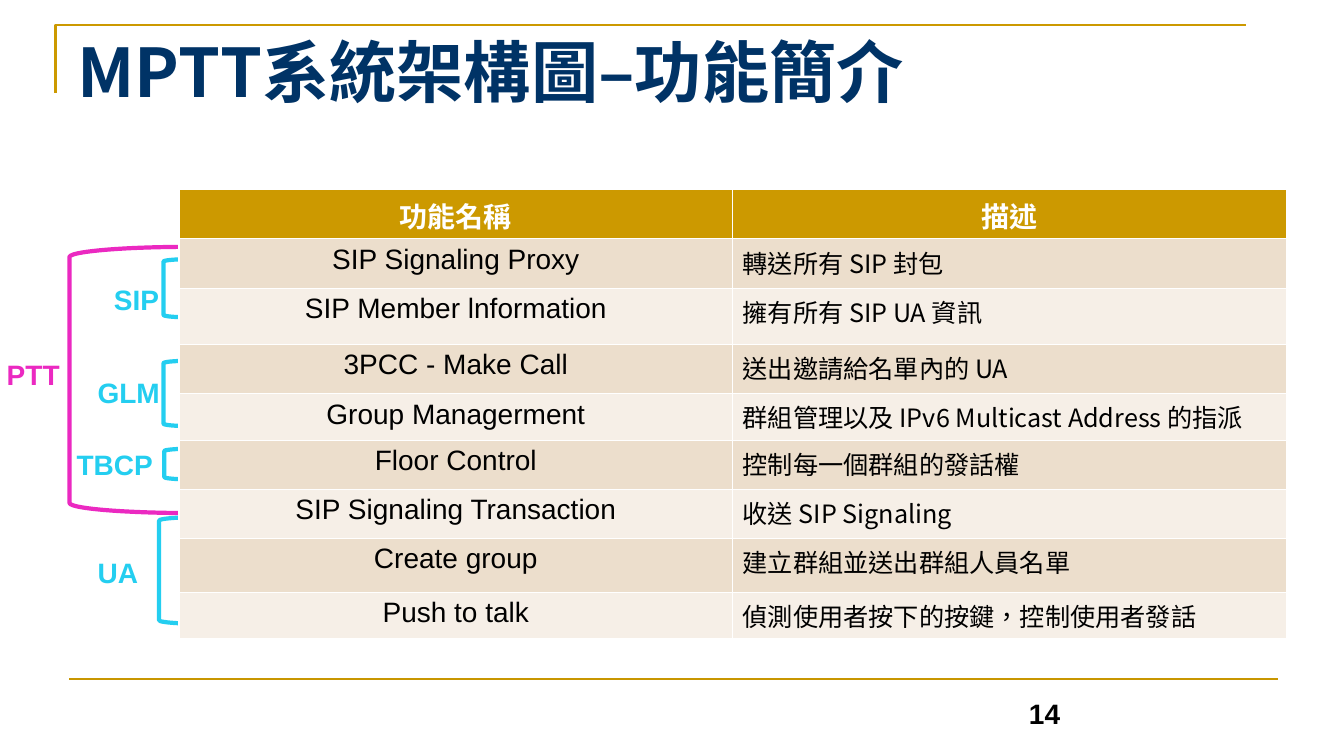
"""Build the MPTT function overview slide: a table with bracketed module groups."""
from lxml import etree
from pptx import Presentation
from pptx import util as u
from pptx.dml.color import RGBColor
from pptx.enum import lang, shapes, text
from pptx.oxml import ns

GOLD = RGBColor(0xCC, 0x99, 0x00)
RULE_GOLD = RGBColor(0xC8, 0x96, 0x00)
NAVY = RGBColor(0x00, 0x33, 0x66)
PINK = RGBColor(0xEB, 0x29, 0xC1)
CYAN = RGBColor(0x24, 0xCE, 0xF0)
SAND = RGBColor(0xEC, 0xDE, 0xCC)
CREAM = RGBColor(0xF6, 0xEF, 0xE7)
WHITE = RGBColor(0xFF, 0xFF, 0xFF)
BLACK = RGBColor(0x00, 0x00, 0x00)
LATIN, CHINESE = "Arial", "Noto Sans CJK SC"
CENTER, LEFT = text.PP_ALIGN.CENTER, text.PP_ALIGN.LEFT

HEADER = ("功能名稱", "描述")
FUNCTIONS = [
    ("SIP Signaling Proxy", "轉送所有 SIP 封包"),
    ("SIP Member lnformation", "擁有所有 SIP UA 資訊"),
    ("3PCC - Make Call", "送出邀請給名單內的 UA"),
    ("Group Managerment", "群組管理以及 IPv6 Multicast Address 的指派"),
    ("Floor Control", "控制每一個群組的發話權"),
    ("SIP Signaling Transaction", "收送 SIP Signaling"),
    ("Create group", "建立群組並送出群組人員名單"),
    ("Push to talk", "偵測使用者按下的按鍵，控制使用者發話"),
]
ROW_HEIGHTS = (1.24, 1.24, 1.42, 1.24, 1.17, 1.24, 1.24, 1.35, 1.17)

GROUPS = [
    ("PTT", PINK, (1.75, 6.22, 3.1, 6.71), (-0.08, 8.89, 1.85, 1.12)),
    ("TBCP", CYAN, (4.14, 11.3, 0.97, 0.79), (1.68, 11.15, 2.46, 1.12)),
    ("GLM", CYAN, (4.12, 9.09, 0.74, 1.65), (2.21, 9.35, 2.08, 1.12)),
    ("SIP", CYAN, (4.12, 6.53, 0.74, 1.47), (2.62, 6.99, 1.65, 1.12)),
    ("UA", CYAN, (4.01, 13.03, 1.07, 2.69), (2.21, 13.87, 1.55, 1.12)),
]


def cm(*lengths):
    return [u.Cm(length) for length in lengths]


class SlideBuilder:
    """Holds the current slide and its text style."""

    def __init__(self, deck):
        self.slide = deck.slides.add_slide(deck.slide_layouts[5])
        self.shapes = self.slide.shapes

    def add_words(self, frame, words, size, color, bold=False, font=LATIN, align=LEFT):
        para = frame.paragraphs[0]
        para.alignment = align
        span = para.add_run()
        span.text = words
        span.font.size = u.Pt(size)
        span.font.bold = bold
        span.font.name = font
        span.font.color.rgb = color
        if not words.isascii():
            span.font.language_id = lang.MSO_LANGUAGE_ID.TRADITIONAL_CHINESE
            east_asian = etree.SubElement(span._r.rPr, ns.qn("a:ea"))
            east_asian.set("typeface", CHINESE)

    def title(self, words, place):
        box = self.shapes.title
        box.left, box.top, box.width, box.height = cm(*place)
        frame = box.text_frame
        frame.vertical_anchor = text.MSO_ANCHOR.TOP
        frame.margin_top = 0
        self.add_words(frame, words, 48, NAVY, True, CHINESE)

    def corner(self, left, top, right, bottom):
        start, *rest = [cm(*point) for point in ((left, bottom), (left, top), (right, top))]
        builder = self.shapes.build_freeform(*start)
        builder.add_line_segments(rest, close=False)
        outline = builder.convert_to_shape()
        outline.shadow.inherit = False
        outline.fill.background()
        outline.line.color.rgb = GOLD
        outline.line.width = u.Pt(1.5)

    def rule(self, left, right, top):
        line = self.shapes.add_connector(
            shapes.MSO_CONNECTOR.STRAIGHT, *cm(left, top, right, top))
        line.line.color.rgb = RULE_GOLD
        line.line.width = u.Pt(1.5)
        etree.SubElement(line._element.spPr, ns.qn("a:effectLst"))

    def bracket(self, color, place):
        brace = self.shapes.add_shape(shapes.MSO_SHAPE.LEFT_BRACKET, *cm(*place))
        brace.shadow.inherit = False
        brace.fill.background()
        brace.line.color.rgb = color
        brace.line.width = u.Pt(3)

    def label(self, words, color, place, align=LEFT):
        box = self.shapes.add_textbox(*cm(*place))
        box.text_frame.word_wrap = False
        box.text_frame.auto_size = text.MSO_AUTO_SIZE.SHAPE_TO_FIT_TEXT
        self.add_words(box.text_frame, words, 20, color, True, align=align)
        return box

    def table(self, place, header, rows, heights):
        grid = self.shapes.add_table(len(rows) + 1, len(header), *cm(*place)).table
        for row, height in zip(grid.rows, heights):
            row.height = u.Cm(height)
        for r, words in enumerate([header, *rows]):
            for c, entry in enumerate(words):
                cell = grid.cell(r, c)
                cell.fill.solid()
                if r == 0:
                    cell.fill.fore_color.rgb = GOLD
                    self.add_words(cell.text_frame, entry, 20, WHITE, True, align=CENTER)
                    continue
                cell.fill.fore_color.rgb = SAND if r % 2 else CREAM
                if c == 0:
                    self.add_words(cell.text_frame, entry, 20, BLACK, align=CENTER)
                else:
                    self.add_words(cell.text_frame, entry, 18, BLACK, font=CHINESE)


def main():
    deck = Presentation()
    deck.slide_width, deck.slide_height = cm(33.87, 19.05)
    page = SlideBuilder(deck)
    page.corner(1.4, 0.63, 31.39, 2.34)
    number = page.label("14", BLACK, (25.55, 17.42, 1.55, 1.12), CENTER)
    number.fill.solid()
    number.fill.fore_color.rgb = WHITE
    page.rule(1.74, 32.2, 17.12)
    page.title("MPTT系統架構圖–功能簡介", (1.7, 0.76, 30.48, 3.18))
    for _, color, brace, _ in GROUPS:
        page.bracket(color, brace)
    page.table((4.51, 4.78, 27.91, sum(ROW_HEIGHTS)), HEADER, FUNCTIONS, ROW_HEIGHTS)
    for name, color, _, place in GROUPS:
        page.label(name, color, place)
    deck.save("out.pptx")


if __name__ == "__main__":
    main()
